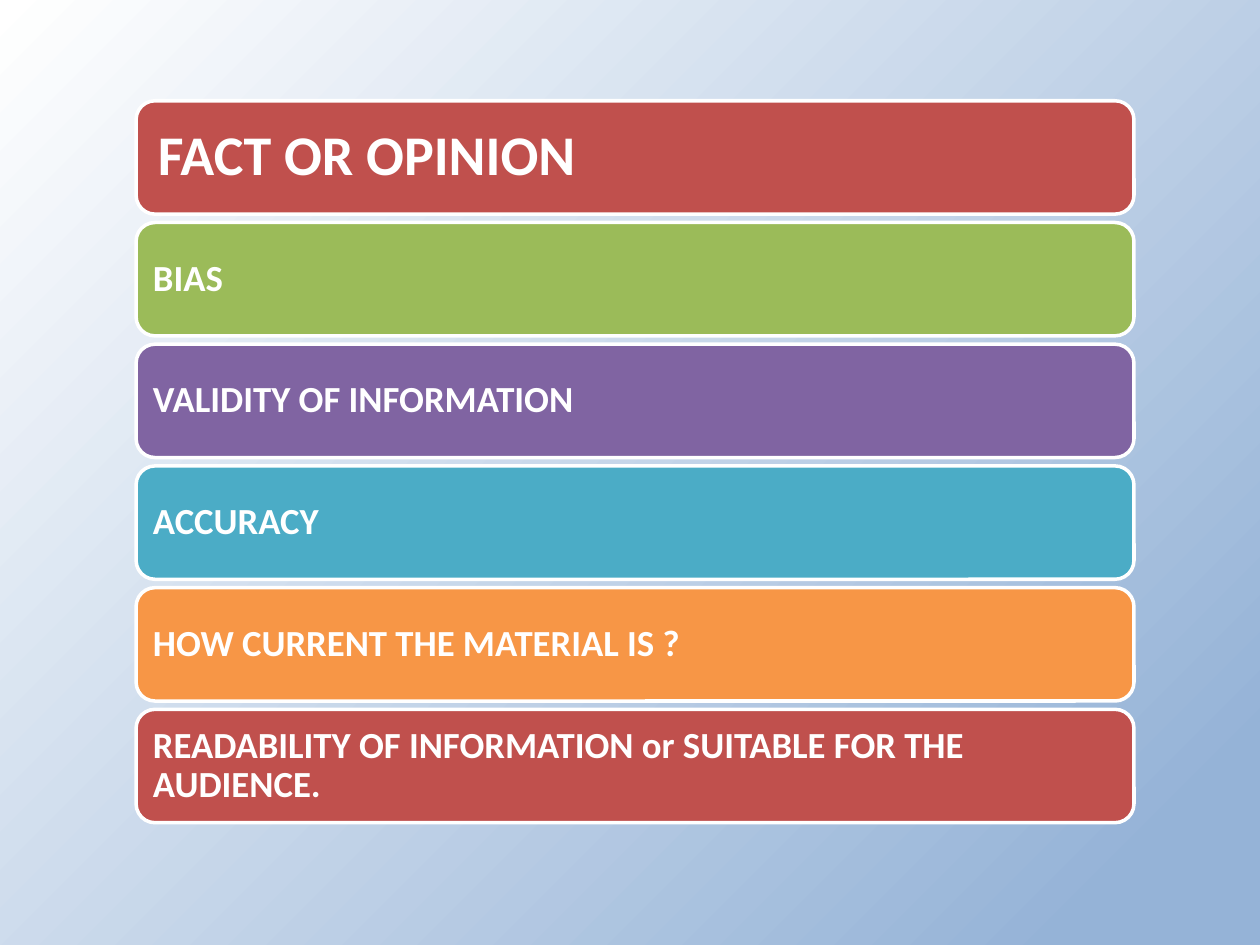
import dataclasses

import pptx
import pptx.dml.color
import pptx.enum.shapes
import pptx.enum.text
import pptx.oxml
import pptx.oxml.ns
import pptx.util


@dataclasses.dataclass(frozen=True)
class Theme:
    font: str = "Calibri"
    white: str = "FFFFFF"
    backdrop: str = "95B3D7"
    bands: tuple = ("C0504D", "9BBB59", "8064A2", "4BACC6", "F79646")
    lead_size: int = 32
    band_size: int = 21
    lead_inset: float = 0.13
    band_inset: float = 0.09
    outline: int = 2


class Deck:
    def __init__(self, theme, width, height):
        self.theme = theme
        self.show = pptx.Presentation()
        self.show.slide_width = pptx.util.Inches(width)
        self.show.slide_height = pptx.util.Inches(height)
        self.slide = self.show.slides.add_slide(self.show.slide_layouts[6])

    def color(self, value):
        return pptx.dml.color.RGBColor.from_string(value)

    def apply(self, target, formats):
        for name, value in formats.items():
            setattr(target, name, value)

    def backdrop(self):
        namespaces = pptx.oxml.ns.nsdecls("p", "a")
        gradient = pptx.oxml.parse_xml(
            f'<p:bg {namespaces}><p:bgPr><a:gradFill rotWithShape="1"><a:gsLst>'
            f'<a:gs pos="9000"><a:srgbClr val="{self.theme.backdrop}"/></a:gs>'
            f'<a:gs pos="100000"><a:srgbClr val="{self.theme.white}"/></a:gs>'
            '</a:gsLst><a:path path="circle"><a:fillToRect l="100000" t="100000"/></a:path>'
            '</a:gradFill><a:effectLst/></p:bgPr></p:bg>'
        )
        self.slide.element.cSld.insert(0, gradient)

    def band(self, text, left, top, width, height, fill, size, inset):
        across, down = self.show.slide_width, self.show.slide_height
        band = self.slide.shapes.add_shape(
            pptx.enum.shapes.MSO_SHAPE.ROUNDED_RECTANGLE,
            round(left * across), round(top * down),
            round(width * across), round(height * down),
        )
        band.shadow.inherit = False
        band.fill.solid()
        band.fill.fore_color.rgb = self.color(fill)
        band.line.color.rgb = self.color(self.theme.white)
        band.line.width = pptx.util.Pt(self.theme.outline)
        margin = pptx.util.Inches(inset)
        frame = band.text_frame
        self.apply(frame, {
            "text": text,
            "word_wrap": True,
            "vertical_anchor": pptx.enum.text.MSO_ANCHOR.MIDDLE,
            **{f"margin_{side}": margin for side in ("left", "top", "right", "bottom")},
        })
        criterion = frame.paragraphs[0]
        self.apply(criterion, {
            "alignment": pptx.enum.text.PP_ALIGN.LEFT,
            "line_spacing": 0.9,
        })
        lettering = criterion.runs[0].font
        self.apply(lettering, {
            "name": self.theme.font,
            "size": pptx.util.Pt(size),
            "bold": True,
        })
        lettering.color.rgb = self.color(self.theme.white)

    def save(self):
        self.show.save("out.pptx")


def main():
    theme = Theme()
    deck = Deck(theme, 10, 7.5)
    deck.backdrop()
    criteria = (
        "FACT OR OPINION",
        "BIAS",
        "VALIDITY OF INFORMATION",
        "ACCURACY",
        "HOW CURRENT THE MATERIAL IS ?",
        "READABILITY OF INFORMATION or SUITABLE FOR THE AUDIENCE.",
    )
    left, width = 0.108, 0.792
    first_top, height = 0.8 / 7.5, 0.12
    pitch = (5.63 - 0.8) / 7.5 / (len(criteria) - 1)
    for row, criterion in enumerate(criteria):
        lead = row == 0
        deck.band(
            criterion, left, first_top + row * pitch, width, height,
            fill=theme.bands[row % len(theme.bands)],
            size=theme.lead_size if lead else theme.band_size,
            inset=theme.lead_inset if lead else theme.band_inset,
        )
    deck.save()


if __name__ == "__main__":
    main()
